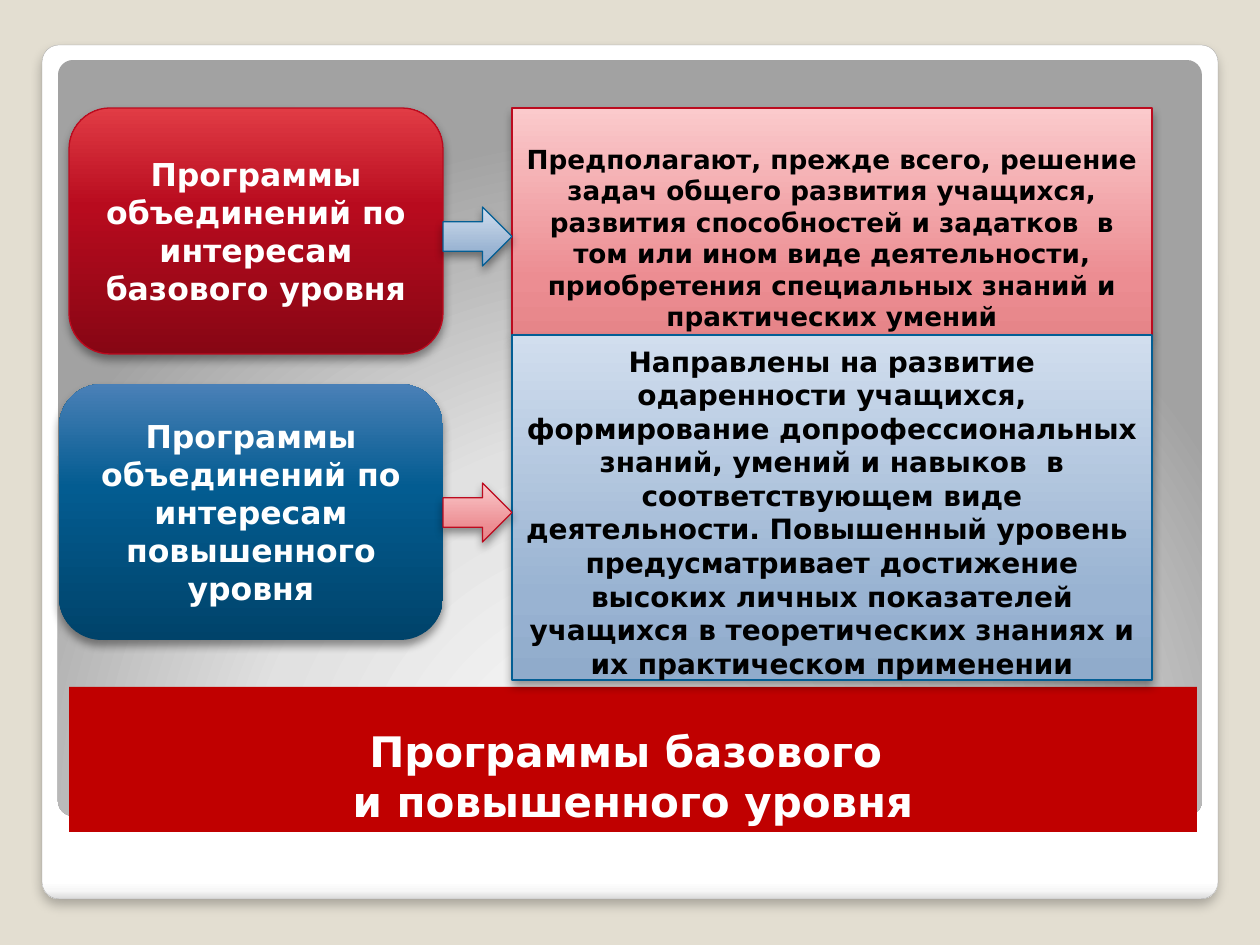
from dataclasses import dataclass
from typing import Optional

from lxml.etree import SubElement
from pptx import Presentation
from pptx.dml.color import RGBColor
from pptx.enum.shapes import MSO_SHAPE
from pptx.enum.text import MSO_ANCHOR, PP_ALIGN
from pptx.oxml.ns import qn
from pptx.util import Emu, Pt

SCALE = 914400 / 126
FONT = "DejaVu Sans"
UP, DOWN = 270, 90


def px(n: int) -> Emu:
    """Turn pixels into EMU."""
    return Emu(round(n * SCALE))


def rgb(color: str) -> RGBColor:
    """Turn a hex string into a colour."""
    return RGBColor.from_string(color)


@dataclass(frozen=True)
class Shadow:
    """Outer shadow cast downwards, in points and percent."""
    alpha: int
    blur: float
    dist: float


@dataclass(frozen=True)
class Paint:
    """Gradient stops with a direction; no angle means a radial fill."""
    stops: tuple[tuple[int, str], ...]
    angle: Optional[int] = UP
    line: Optional[str] = None
    width: float = 0.75


@dataclass(frozen=True)
class Label:
    """Bold centred text with its top and bottom insets in pixels."""
    text: str
    size: int
    color: str
    top: int = 6
    bottom: int = 6
    anchor: MSO_ANCHOR = MSO_ANCHOR.MIDDLE


@dataclass(frozen=True)
class Block:
    """One shape of the slide, placed in pixels."""
    kind: MSO_SHAPE
    box: tuple[int, int, int, int]
    paint: Paint
    shadow: Optional[Shadow] = None
    label: Optional[Label] = None
    radius: Optional[float] = None


def add_gradient(sp, paint: Paint) -> None:
    """Fill a shape with a linear or radial gradient."""
    sp.fill.gradient()
    grad = sp._element.spPr.find(qn("a:gradFill"))
    grad.clear()
    stops = SubElement(grad, qn("a:gsLst"))
    for pos, color in paint.stops:
        gs = SubElement(stops, qn("a:gs"), pos=str(pos * 1000))
        SubElement(gs, qn("a:srgbClr"), val=color)
    if paint.angle is None:
        radial = SubElement(grad, qn("a:path"), {"path": "circle"})
        SubElement(radial, qn("a:fillToRect"), l="50000", t="175000", r="50000", b="-75000")
    else:
        SubElement(grad, qn("a:lin"), ang=str(paint.angle * 60000), scaled="0")


def add_shadow(sp, shadow: Shadow) -> None:
    """Give a shape a soft black shadow below it."""
    effects = sp._element.spPr.find(qn("a:effectLst"))
    outer = SubElement(effects, qn("a:outerShdw"), blurRad=str(Pt(shadow.blur)),
                       dist=str(Pt(shadow.dist)), dir=str(DOWN * 60000),
                       algn="t", rotWithShape="0")
    color = SubElement(outer, qn("a:srgbClr"), val="000000")
    SubElement(color, qn("a:alpha"), val=str(shadow.alpha * 1000))


def add_label(sp, label: Label) -> None:
    """Write the text of a shape."""
    tf = sp.text_frame
    tf.word_wrap = True
    tf.vertical_anchor = label.anchor
    tf.margin_top, tf.margin_bottom = px(label.top), px(label.bottom)
    p = tf.paragraphs[0]
    p.text = label.text
    p.alignment = PP_ALIGN.CENTER
    for r in p.runs:
        r.font.name, r.font.size, r.font.bold = FONT, Pt(label.size), True
        r.font.color.rgb = rgb(label.color)


def add_block(slide, block: Block) -> None:
    """Draw one block on the slide."""
    sp = slide.shapes.add_shape(block.kind, *map(px, block.box))
    sp.shadow.inherit = False
    if block.radius is not None:
        sp.adjustments[0] = block.radius
    paint = block.paint
    if len(paint.stops) == 1:
        sp.fill.solid()
        sp.fill.fore_color.rgb = rgb(paint.stops[0][1])
    else:
        add_gradient(sp, paint)
    if paint.line:
        sp.line.color.rgb = rgb(paint.line)
        sp.line.width = Pt(paint.width)
    else:
        sp.line.fill.background()
    if block.shadow:
        add_shadow(sp, block.shadow)
    if block.label:
        add_label(sp, block.label)


CARD = Paint(((0, "FFFFFF"), (98, "FFFFFF"), (99, "F7F7F7"), (100, "DADADA")), DOWN, "A4A4A4", 0.16)
PANEL = Paint(((0, "FFFFFF"), (55, "E1E1E1"), (100, "A2A2A2")), None)
BANNER = Paint(((0, "C00000"),))
RED = Paint(((0, "870614"), (60, "B80B1E"), (100, "E13C45")), line="BC0B1F")
BLUE = Paint(((0, "00436A"), (60, "035C91"), (100, "4A80B7")))
PINK = Paint(((0, "E68589"), (25, "EC8D92"), (100, "FBCACC")), line="BC0B1F")
SKY = Paint(((0, "90ABCB"), (25, "99B3D2"), (100, "D1DEEE")), line="035E94")
SOFT = Shadow(40, 5.2, 3)

ROUND, RECT, ARROW = MSO_SHAPE.ROUNDED_RECTANGLE, MSO_SHAPE.RECTANGLE, MSO_SHAPE.RIGHT_ARROW

BASIC = ("Предполагают, прежде всего, решение задач общего развития учащихся, "
         "развития способностей и задатков  в том или ином виде деятельности, "
         "приобретения специальных знаний и практических умений")
ADVANCED = ("Направлены на развитие одаренности учащихся, формирование "
            "допрофессиональных знаний, умений и навыков  в соответствующем виде "
            "деятельности. Повышенный уровень  предусматривает достижение высоких "
            "личных показателей учащихся в теоретических знаниях и их практическом "
            "применении")

BLOCKS = (
    Block(ROUND, (42, 45, 1176, 854), CARD, Shadow(25, 6, 4), radius=0.02),
    Block(ROUND, (58, 60, 1144, 756), PANEL, radius=0.02),
    Block(RECT, (69, 687, 1128, 145), BANNER,
          label=Label("Программы базового \vи повышенного уровня", 24, "FFFFFF",
                      anchor=MSO_ANCHOR.BOTTOM)),
    Block(ROUND, (69, 108, 374, 246), RED, SOFT,
          Label("Программы объединений по интересам базового уровня", 18, "FFFFFF")),
    Block(ROUND, (59, 384, 384, 256), BLUE, SOFT,
          Label("Программы объединений по интересам повышенного уровня", 18, "FFFFFF")),
    Block(RECT, (512, 108, 640, 227), PINK, SOFT, Label(BASIC, 15, "000000", 34, 2)),
    Block(RECT, (512, 335, 640, 345), SKY, SOFT, Label(ADVANCED, 16, "000000", 9, 0)),
    Block(ARROW, (443, 207, 69, 59), SKY, SOFT),
    Block(ARROW, (443, 483, 69, 59), PINK, SOFT),
)


def main() -> None:
    """Build the slide and save it."""
    prs = Presentation()
    prs.slide_width, prs.slide_height = px(1260), px(945)
    slide = prs.slides.add_slide(prs.slide_layouts[6])
    slide.background.fill.solid()
    slide.background.fill.fore_color.rgb = rgb("E3DED1")
    for block in BLOCKS:
        add_block(slide, block)
    prs.save("out.pptx")


if __name__ == "__main__":
    main()
